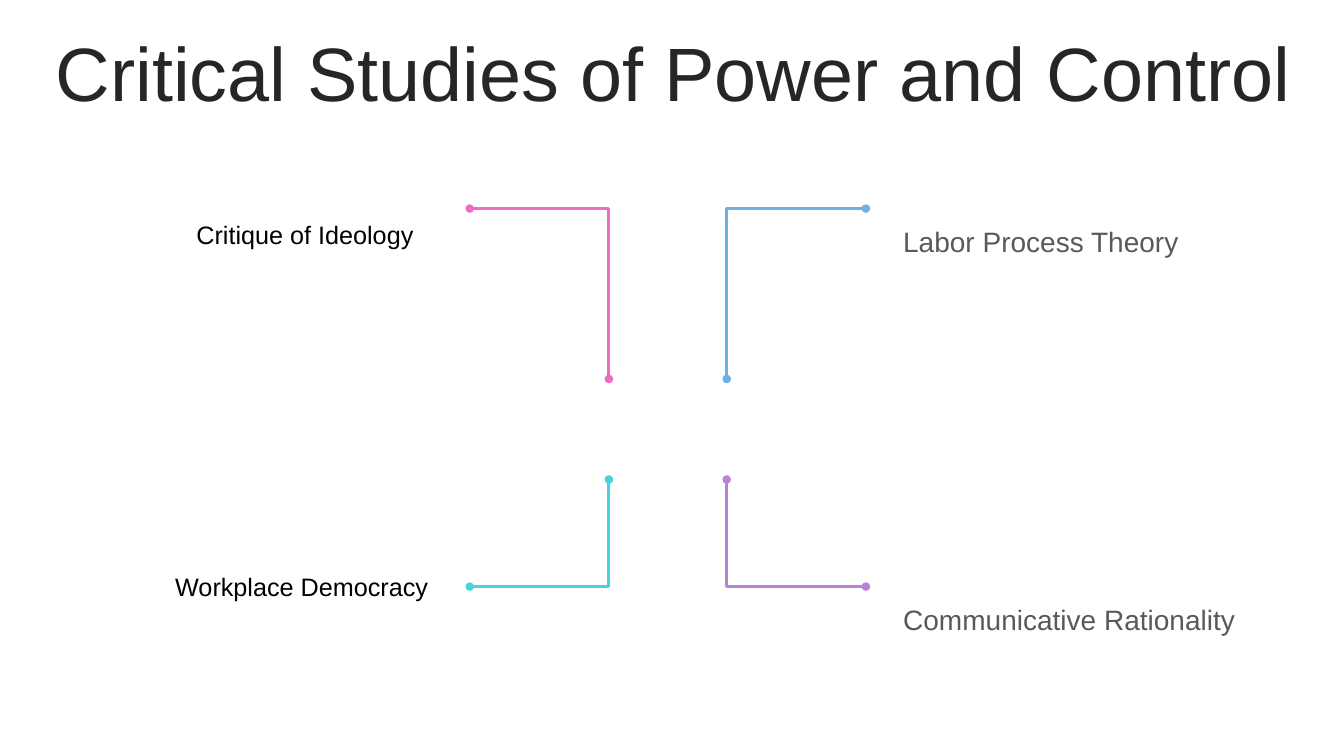
import dataclasses

import pptx
import pptx.dml.color
import pptx.enum.shapes
import pptx.enum.text
import pptx.oxml
import pptx.oxml.ns
import pptx.util
from pptx.util import Pt


@dataclasses.dataclass(frozen=True)
class Theme:
    font: str = "Arial"
    title_size: int = 54
    large_label_size: int = 20
    small_label_size: int = 18
    title: str = "262626"
    grey: str = "595959"
    black: str = "000000"
    pink: str = "EE6CC1"
    blue: str = "6DB0E4"
    teal: str = "47D3DC"
    purple: str = "B982D5"
    line_width: int = 2


THEME = Theme()


def rgb(color):
    return pptx.dml.color.RGBColor.from_string(color)


def add_text(slide, box, text, size, color):
    """Add a one-run text box and return its text frame."""
    frame = slide.shapes.add_textbox(*map(Pt, box)).text_frame
    frame.word_wrap = True
    run = frame.paragraphs[0].add_run()
    run.text = text
    run.font.name = THEME.font
    run.font.size = Pt(size)
    run.font.color.rgb = rgb(color)
    return frame


def add_title(slide, box, text):
    frame = add_text(slide, box, text, THEME.title_size, THEME.title)
    frame.vertical_anchor = pptx.enum.text.MSO_ANCHOR.MIDDLE
    paragraph = frame.paragraphs[0]
    paragraph.alignment = pptx.enum.text.PP_ALIGN.CENTER
    paragraph.line_spacing = 0.9
    paragraph.space_before = Pt(10)


def add_left_label(slide, box, text):
    frame = add_text(slide, box, text, THEME.small_label_size, THEME.black)
    frame.word_wrap = False
    frame.auto_size = pptx.enum.text.MSO_AUTO_SIZE.SHAPE_TO_FIT_TEXT


def add_right_label(slide, box, text):
    frame = add_text(slide, box, text, THEME.large_label_size, THEME.grey)
    frame.margin_left = 0
    frame.auto_size = pptx.enum.text.MSO_AUTO_SIZE.SHAPE_TO_FIT_TEXT


def add_elbow(slide, outer, inner, color):
    """Run level from the outer point, then upright to the inner point."""
    connector = slide.shapes.add_connector(
        pptx.enum.shapes.MSO_CONNECTOR.ELBOW, *map(Pt, outer + inner))
    connector.line.color.rgb = rgb(color)
    connector.line.width = Pt(THEME.line_width)
    qn = pptx.oxml.ns.qn
    properties = connector._element.spPr
    geometry = properties.find(qn("a:prstGeom"))
    guides = geometry.find(qn("a:avLst"))
    if guides is None:
        guides = pptx.oxml.ns.qn and geometry.makeelement(qn("a:avLst"), {})
        geometry.append(guides)
    guides.append(guides.makeelement(
        qn("a:gd"), {"name": "adj1", "fmla": "val 100000"}))
    line = properties.find(qn("a:ln"))
    for end in ("a:headEnd", "a:tailEnd"):
        line.append(line.makeelement(qn(end), {"type": "oval"}))
    properties.append(properties.makeelement(qn("a:effectLst"), {}))


def add_branches(slide, box):
    """Draw four elbows from the corners of the box towards its middle."""
    left, top, width, height = box
    reach, upper_drop, lower_rise = 99.4, 121.7, 76.5
    right, bottom = left + width, top + height
    for outer_x, inner_x, upper_color, lower_color in (
            (left, left + reach, THEME.pink, THEME.teal),
            (right, right - reach, THEME.blue, THEME.purple)):
        add_elbow(slide, (outer_x, top), (inner_x, top + upper_drop), upper_color)
        add_elbow(slide, (outer_x, bottom), (inner_x, bottom - lower_rise), lower_color)


def main():
    presentation = pptx.Presentation()
    presentation.slide_width, presentation.slide_height = Pt(960), Pt(540)
    slide = presentation.slides.add_slide(presentation.slide_layouts[6])
    add_title(slide, (25.2, 26.6, 911.5, 56.9), "Critical Studies of Power and Control")
    add_branches(slide, (335.5, 149, 283, 270))
    add_left_label(slide, (133.2, 153.4, 171.4, 29), "Critique of Ideology")
    add_left_label(slide, (118.1, 404.6, 197.3, 29), "Workplace Democracy")
    add_right_label(slide, (645.1, 157, 251.3, 31.5), "Labor Process Theory")
    add_right_label(slide, (645.1, 427, 251.3, 31.5), "Communicative Rationality")
    presentation.save("out.pptx")


if __name__ == "__main__":
    main()
